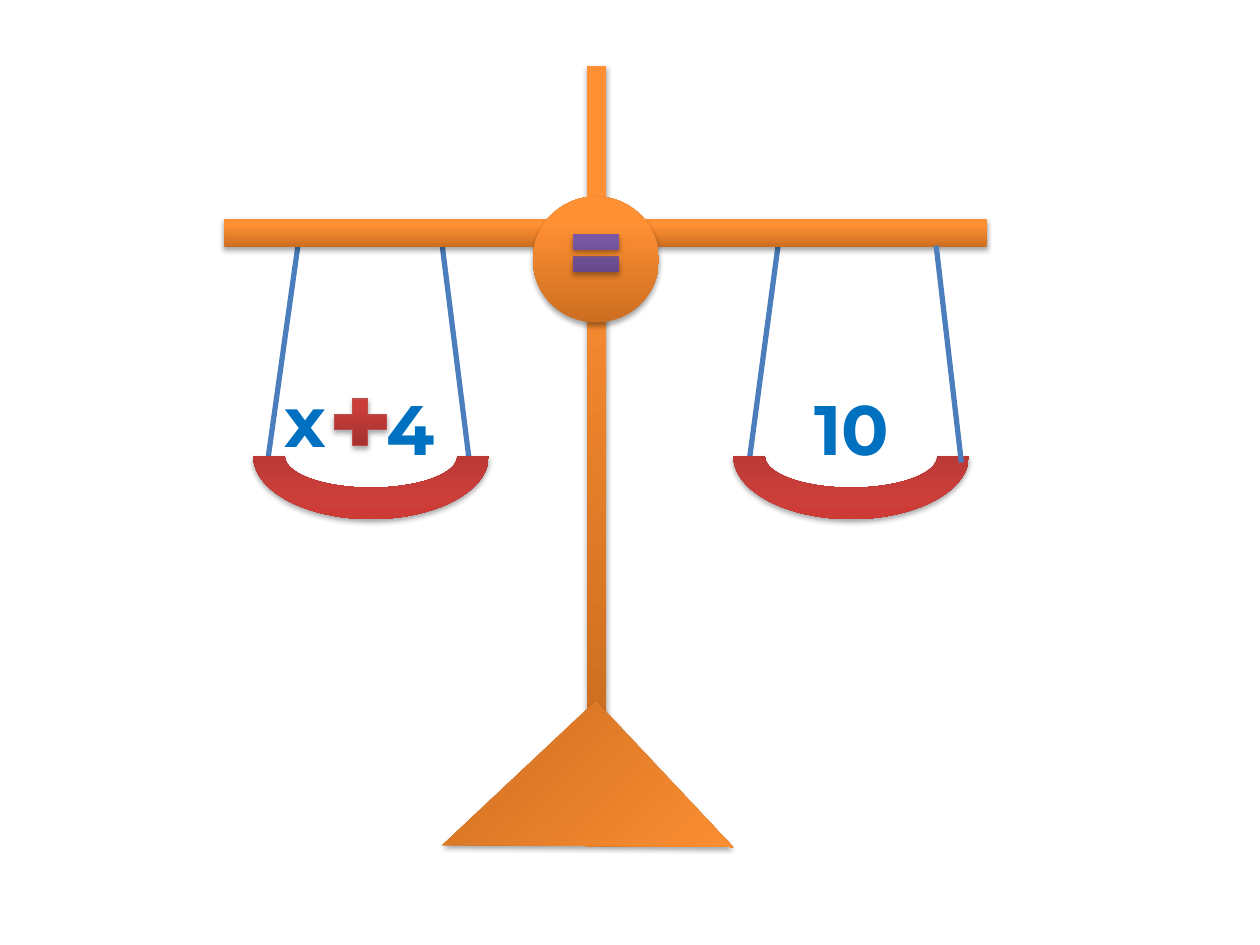
from lxml.etree import SubElement
from pptx import Presentation
from pptx.dml.color import RGBColor
from pptx.enum.shapes import MSO_CONNECTOR, MSO_SHAPE
from pptx.enum.text import MSO_ANCHOR, PP_ALIGN
from pptx.oxml.ns import qn
from pptx.util import Emu, Pt

PX = 9144  # 100 px to the inch
WHITE = RGBColor(0xFF, 0xFF, 0xFF)
TEXT_BLUE = RGBColor(0x00, 0x70, 0xC0)
STRING_BLUE = RGBColor(0x4B, 0x7E, 0xBC)
PLUS_EDGE = RGBColor(0xBF, 0x4C, 0x48)
BLACK = RGBColor(0, 0, 0)


def shades(*colors):
    return list(zip((0, 80, 100), map(RGBColor.from_string, colors)))


ORANGE = shades("CC6E20", "FF9034", "FF9136")
RED = shades("9C2F2D", "CB3E3A", "CE3B37")
PURPLE = shades("5F4480", "7B58A6", "7C57A8")

# Content: weights (text, left, top), each in a 100 px square
WEIGHTS = [("x", 192, 283), ("10", 626, 289), ("4", 276, 289)]
FONT = {"name": "Montserrat", "size": Pt(40), "bold": True}

# Strings (x1, y1, x2, y2); the last one hangs in front of its pan
BACK_STRINGS = [(351, 195, 372, 362), (619, 184, 595, 363), (238, 184, 213, 362)]
FRONT_STRING = (743, 195, 763, 367)

# Parts (shape, box, shades, rotation), from back to front
PAN_LEFTS = (201, 582)
FRAME = [
    (MSO_SHAPE.RECTANGLE, (466, 52, 15, 528), ORANGE, 0),
    (MSO_SHAPE.RIGHT_TRIANGLE, (383, 592, 167, 159), ORANGE, 136.8),
    (MSO_SHAPE.RECTANGLE, (178, 174, 605, 22), ORANGE, 0),
    (MSO_SHAPE.OVAL, (423, 156, 100, 100), ORANGE, 0),
] + [(MSO_SHAPE.BLOCK_ARC, (x, 312, 187, 100), RED, 180) for x in PAN_LEFTS]
PLUS = (MSO_SHAPE.MATH_PLUS, (258, 310, 56, 50), RED, 0)
EQUAL = (MSO_SHAPE.MATH_EQUAL, (448, 176, 50, 50), PURPLE, 0)


def px(values):
    return [Emu(v * PX) for v in values]


def add_color(parent, color, **changes):
    clr = SubElement(parent, qn("a:srgbClr"), val=str(color))
    for name, val in changes.items():
        SubElement(clr, qn("a:" + name), val=str(val))


def add_plain(s, kind, box):
    sp = s.shapes.add_shape(kind, *px(box))
    sp.shadow.inherit = False
    sp.line.fill.background()
    return sp


def add_weight(s, text, left, top):
    sp = add_plain(s, MSO_SHAPE.RECTANGLE, (left, top, 100, 100))
    sp.fill.solid()
    sp.fill.fore_color.rgb = WHITE
    tf = sp.text_frame
    tf.vertical_anchor = MSO_ANCHOR.MIDDLE
    p = tf.paragraphs[0]
    p.alignment = PP_ALIGN.CENTER
    r = p.add_run()
    r.text = text
    for name, value in FONT.items():
        setattr(r.font, name, value)
    r.font.color.rgb = TEXT_BLUE


def add_part(s, kind, box, stops, rotation):
    sp = add_plain(s, kind, box)
    sp.rotation = rotation
    # Gradient from bottom to top
    sp.fill.gradient()
    sp.fill.gradient_angle = 90
    gs_list = sp._element.spPr.find(".//" + qn("a:gsLst"))
    for gs in list(gs_list):
        gs_list.remove(gs)
    for pos, color in stops:
        add_color(SubElement(gs_list, qn("a:gs"), pos=str(pos * 1000)), color)
    # Soft shadow straight below
    effects = sp._element.spPr.find(qn("a:effectLst"))
    shadow = SubElement(effects, qn("a:outerShdw"), blurRad=str(Pt(3.1)),
                        dist=str(Pt(1.8)), dir="5400000", rotWithShape="0")
    add_color(shadow, BLACK, alpha=35000)
    return sp


def add_string(s, ends):
    line = s.shapes.add_connector(MSO_CONNECTOR.STRAIGHT, *px(ends))
    line.line.color.rgb = STRING_BLUE
    line.line.width = Pt(3)
    SubElement(line._element.spPr, qn("a:effectLst"))


def main():
    prs = Presentation()
    prs.slide_width, prs.slide_height = px((1000, 750))
    s = prs.slides.add_slide(prs.slide_layouts[6])

    for weight in WEIGHTS:
        add_weight(s, *weight)
    for ends in BACK_STRINGS:
        add_string(s, ends)
    for part in FRAME:
        add_part(s, *part)
    add_string(s, FRONT_STRING)

    # Signs
    plus = add_part(s, *PLUS)
    plus.line.color.rgb = PLUS_EDGE
    plus.line.width = Pt(0.75)
    add_part(s, *EQUAL)

    prs.save("out.pptx")


if __name__ == "__main__":
    main()
